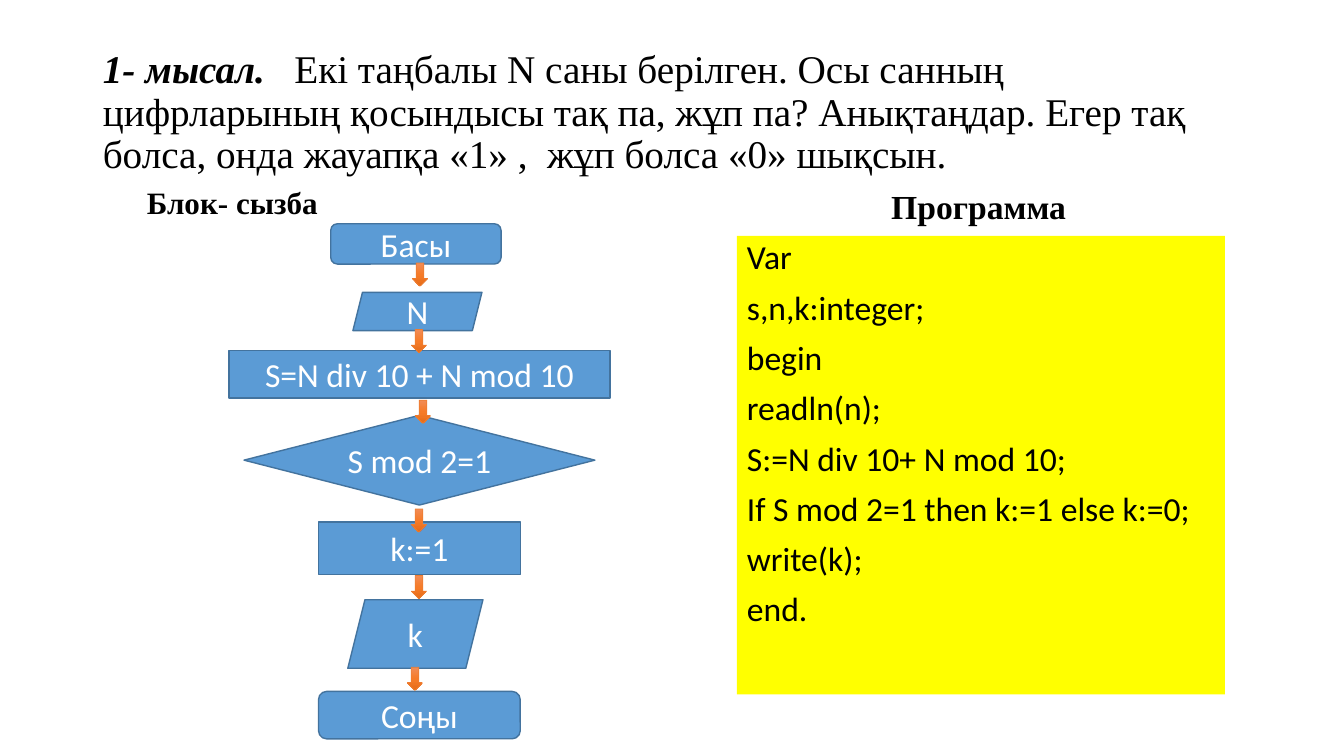
from copy import deepcopy

from pptx import Presentation
from pptx.dml.color import RGBColor
from pptx.enum.shapes import MSO_SHAPE
from pptx.enum.text import MSO_ANCHOR, MSO_AUTO_SIZE, PP_ALIGN
from pptx.oxml.ns import qn
from pptx.util import Inches, Pt

COLORS = {
    "text": "000000",
    "block": "5B9BD5",
    "block_line": "43739E",
    "block_text": "FFFFFF",
    "program": "FFFF00",
    "arrow_line": "ED7D31",
}
ARROW_GRADIENT = [(0, "F18C57"), (0.5, "F67B28"), (1, "E56C19")]


def rgb(name):
    return RGBColor.from_string(COLORS[name])


def write(frame, paragraphs, size, font="Calibri", color="text", bold=False,
          align=PP_ALIGN.LEFT, anchor=MSO_ANCHOR.TOP, spacing=1.0, before=0):
    """Fill a frame; each paragraph is a list of (text, font overrides) runs."""
    frame.word_wrap = True
    frame.auto_size = MSO_AUTO_SIZE.NONE
    frame.vertical_anchor = anchor
    for index, runs in enumerate(paragraphs):
        paragraph = frame.add_paragraph() if index else frame.paragraphs[0]
        paragraph.alignment = align
        paragraph.line_spacing = spacing
        paragraph.space_before = Pt(before)
        for text, overrides in runs:
            run = paragraph.add_run()
            run.text = text
            run.font.size = Pt(size)
            run.font.name = overrides.get("font", font)
            run.font.bold = overrides.get("bold", bold)
            run.font.italic = overrides.get("italic", False)
            run.font.color.rgb = rgb(color)


prs = Presentation()
prs.slide_width, prs.slide_height = Inches(13.33), Inches(7.5)
slide = prs.slides.add_slide(prs.slide_layouts[5])

# Task statement
task = slide.shapes.title
task.left, task.top = Inches(0.92), Inches(0.4)
task.width, task.height = Inches(11.5), Inches(1.45)
write(task.text_frame, [[
    ("1- мысал.   ", {"bold": True, "italic": True}),
    ("Екі таңбалы N саны берілген. Осы санның цифрларының қосындысы тақ па, "
     "жұп па? Анықтаңдар. Егер тақ болса, онда жауапқа «1» ,  жұп болса «0» "
     "шықсын.", {}),
]], 28, font="Times New Roman", anchor=MSO_ANCHOR.MIDDLE, spacing=0.9)

# Column headings
headings = [
    ("Блок- сызба", 22.2, 0.7, (-0.55, 1.85, 5.64, 0.38)),
    ("Программа ", 24, 0.9, (7.69, 1.78, 4.04, 0.52)),
]
for text, size, spacing, place in headings:
    heading = slide.shapes.add_textbox(*map(Inches, place))
    write(heading.text_frame, [[(" ", {}), (text, {"font": "Times New Roman"})]],
          size, bold=True, align=PP_ALIGN.CENTER, anchor=MSO_ANCHOR.BOTTOM,
          spacing=spacing, before=10)

# Program listing
program_lines = [
    "Var",
    "s,n,k:integer;",
    "begin",
    "readln(n);",
    "S:=N div 10+ N mod 10;",
    "If S mod 2=1 then k:=1 else k:=0;",
    "write(k);",
    "end.",
]
program = slide.shapes.add_textbox(Inches(7.31), Inches(2.34),
                                   Inches(4.84), Inches(4.55))
program.fill.solid()
program.fill.fore_color.rgb = rgb("program")
write(program.text_frame, [[(line, {})] for line in program_lines], 24,
      spacing=0.9, before=10)

# Flowchart blocks
blocks = [
    ("Басы", MSO_SHAPE.ROUNDED_RECTANGLE, (3.28, 2.22, 1.69, 0.4)),
    ("N", MSO_SHAPE.PARALLELOGRAM, (3.5, 2.9, 1.28, 0.38)),
    ("S=N div 10 + N mod 10", MSO_SHAPE.RECTANGLE, (2.27, 3.48, 3.78, 0.47)),
    ("S mod 2=1", MSO_SHAPE.FLOWCHART_DECISION, (2.42, 4.12, 3.48, 0.89)),
    ("k:=1", MSO_SHAPE.FLOWCHART_PROCESS, (3.16, 5.18, 2, 0.52)),
    ("k", MSO_SHAPE.PARALLELOGRAM, (3.45, 5.95, 1.34, 0.68)),
    ("Cоңы", MSO_SHAPE.ROUNDED_RECTANGLE, (3.16, 6.86, 2, 0.47)),
]
for text, outline, place in blocks:
    block = slide.shapes.add_shape(outline, *map(Inches, place))
    block.shadow.inherit = False
    block.fill.solid()
    block.fill.fore_color.rgb = rgb("block")
    block.line.color.rgb = rgb("block_line")
    block.line.width = Pt(1)
    write(block.text_frame, [[(text, {})]], 24, color="block_text",
          align=PP_ALIGN.CENTER, anchor=MSO_ANCHOR.MIDDLE)

# Arrows between the blocks
arrow_corners = [(4.09, 2.61), (4.08, 3.27), (4.12, 3.97),
                 (4.08, 5.05), (4.08, 5.71), (4.04, 6.62)]
for left, top in arrow_corners:
    arrow = slide.shapes.add_shape(MSO_SHAPE.DOWN_ARROW, Inches(left), Inches(top),
                                   Inches(0.15), Inches(0.23))
    arrow.shadow.inherit = False
    arrow.line.color.rgb = rgb("arrow_line")
    arrow.line.width = Pt(0.5)
    arrow.fill.gradient()
    arrow.fill.gradient_angle = 270
    stop_list = arrow._element.spPr.find(qn("a:gradFill")).find(qn("a:gsLst"))
    stop_list.append(deepcopy(stop_list[0]))
    for stop, (position, color) in zip(arrow.fill.gradient_stops, ARROW_GRADIENT):
        stop.position = position
        stop.color.rgb = RGBColor.from_string(color)

prs.save("out.pptx")
